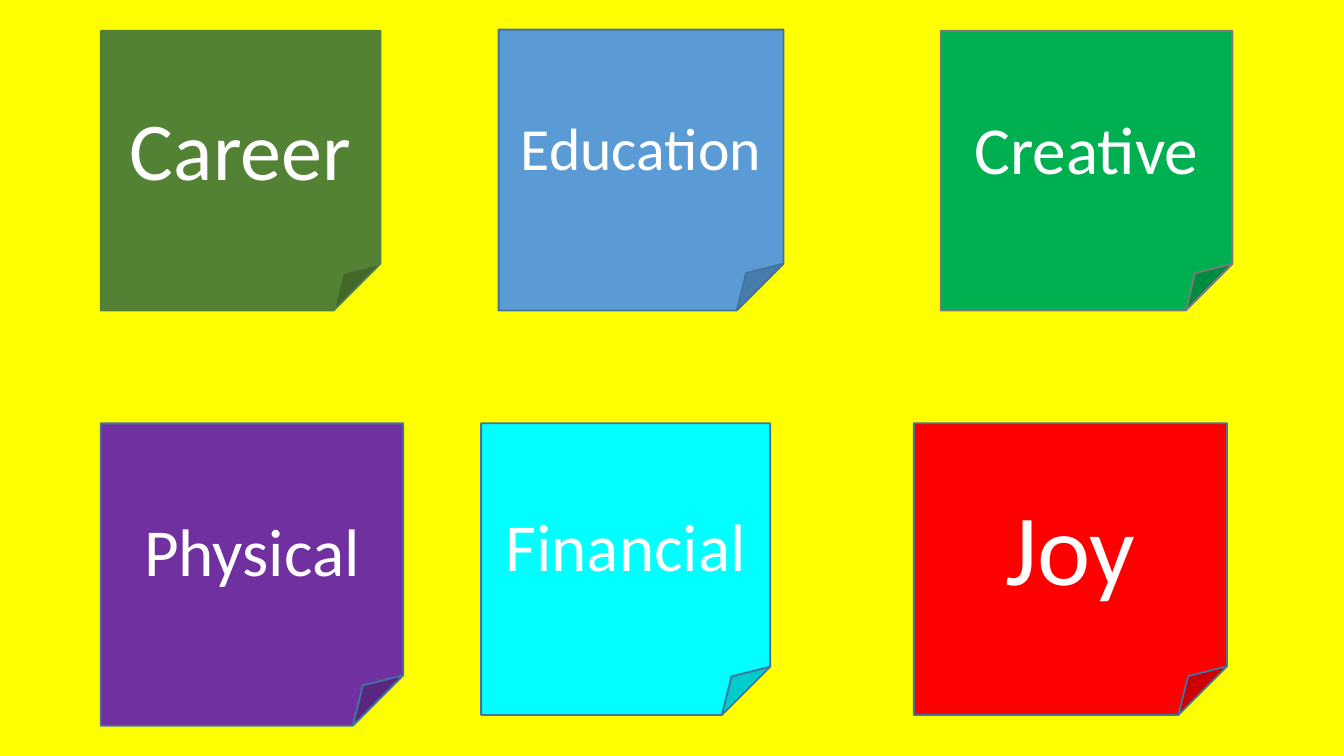
from pptx import Presentation
from pptx.dml.color import RGBColor
from pptx.enum.shapes import MSO_SHAPE
from pptx.enum.text import MSO_ANCHOR, PP_ALIGN
from pptx.util import Inches, Pt

YELLOW = RGBColor(0xFF, 0xFF, 0x00)
WHITE = RGBColor(0xFF, 0xFF, 0xFF)
OLIVE = RGBColor(0x54, 0x82, 0x35)
DARK_OLIVE = RGBColor(0x53, 0x80, 0x35)
BLUE = RGBColor(0x5B, 0x9B, 0xD5)
DARK_BLUE = RGBColor(0x43, 0x73, 0x9E)
GREEN = RGBColor(0x00, 0xB0, 0x50)
GRAY = RGBColor(0x7A, 0x7A, 0x7A)
PURPLE = RGBColor(0x70, 0x30, 0xA0)
CYAN = RGBColor(0x00, 0xFF, 0xFF)
RED = RGBColor(0xFF, 0x00, 0x00)

# Widescreen 16:9 slide
prs = Presentation()
prs.slide_width = Inches(10)
prs.slide_height = Inches(10 * 9 / 16)
slide = prs.slides.add_slide(prs.slide_layouts[6])

# Background
slide.background.fill.solid()
slide.background.fill.fore_color.rgb = YELLOW

# Sticky notes, back to front:
# label, left, top, width, height, fill, outline, text size
life_areas = [
    ("Education", 3.71, 0.22, 2.12, 2.09, BLUE, DARK_BLUE, 32),
    ("Physical", 0.75, 3.15, 2.25, 2.25, PURPLE, DARK_BLUE, 36),
    ("Financial", 3.58, 3.15, 2.15, 2.17, CYAN, DARK_BLUE, 36),
    ("Joy", 6.8, 3.15, 2.33, 2.17, RED, DARK_BLUE, 54),
    ("Creative", 7, 0.23, 2.17, 2.08, GREEN, GRAY, 36),
    ("Career", 0.75, 0.23, 2.08, 2.08, OLIVE, DARK_OLIVE, 44),
]
for label, left, top, width, height, fill, outline, size in life_areas:
    note = slide.shapes.add_shape(
        MSO_SHAPE.FOLDED_CORNER,
        Inches(left), Inches(top), Inches(width), Inches(height))
    note.shadow.inherit = False
    note.fill.solid()
    note.fill.fore_color.rgb = fill
    note.line.color.rgb = outline
    note.line.width = Pt(1)

    # Label centred on the note
    note.text_frame.word_wrap = True
    note.text_frame.vertical_anchor = MSO_ANCHOR.MIDDLE
    paragraph = note.text_frame.paragraphs[0]
    paragraph.alignment = PP_ALIGN.CENTER
    run = paragraph.add_run()
    run.text = label
    run.font.name = "Calibri"
    run.font.size = Pt(size)
    run.font.color.rgb = WHITE

prs.save("out.pptx")
